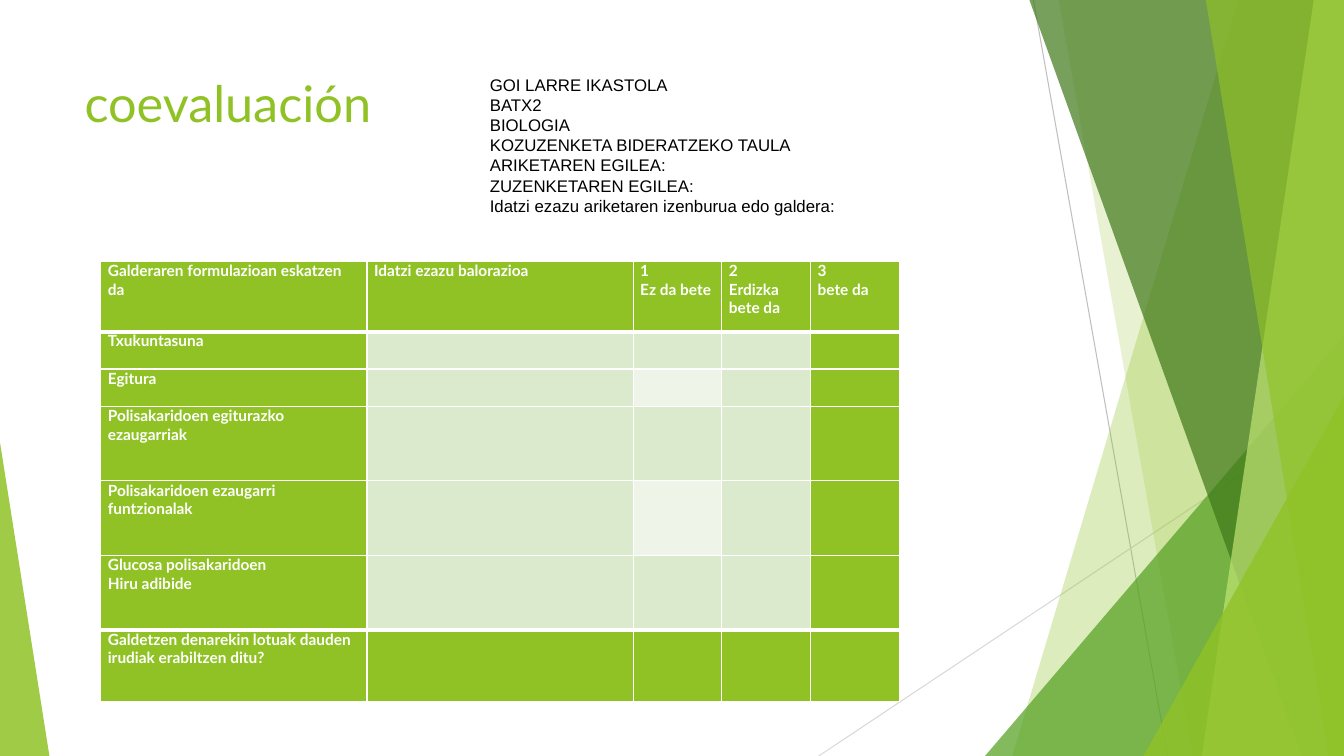
from lxml import etree
from pptx import Presentation
from pptx.dml.color import RGBColor
from pptx.enum.shapes import MSO_CONNECTOR, MSO_SHAPE
from pptx.oxml.ns import qn
from pptx.util import Pt

STRAIGHT = MSO_CONNECTOR.STRAIGHT
TRIANGLE = MSO_SHAPE.ISOSCELES_TRIANGLE
PX = 9144  # EMU per px, 100 px to the inch
WIDTH, HEIGHT = 1333, 750

THEME = {
    "lime": "90C226", "green": "54A021", "forest": "3F7819", "pale lime": "C0E474",
    "band": "DBE9CD", "light band": "EEF4E8", "white": "FFFFFF", "black": "000000",
    "dark line": "BFBFBF", "light line": "D9D9D9",
    "title size": 36, "heading size": 12, "table size": 11,
    "main font": "Lato", "heading font": "Arial",
}


def paint(shape, color, opacity):
    shape.shadow.inherit = False
    shape.line.fill.background()
    shape.fill.solid()
    shape.fill.fore_color.rgb = RGBColor.from_string(THEME[color])
    color_element = shape.fill._xPr.find(qn("a:solidFill"))[0]
    etree.SubElement(color_element, qn("a:alpha"), val=str(opacity * 1000))


def write_lines(text_frame, lines, font, size, color, bold=False):
    """Put each line in its own paragraph."""
    text_frame.word_wrap = True
    for index, line in enumerate(lines):
        paragraph = text_frame.add_paragraph() if index else text_frame.paragraphs[0]
        run = paragraph.add_run()
        run.text = line
        run.font.name = THEME[font]
        run.font.size = Pt(THEME[size])
        run.font.color.rgb = RGBColor.from_string(THEME[color])
        run.font.bold = bold


presentation = Presentation()
presentation.slide_width = WIDTH * PX
presentation.slide_height = HEIGHT * PX
slide = presentation.slides.add_slide(presentation.slide_layouts[6])
shapes = slide.shapes

# Thin lines behind the facets
for x1, y1, x2, y2, color in [
    (1025, 0, 1158, HEIGHT, "dark line"),
    (WIDTH, 403, 812, HEIGHT, "light line"),
]:
    line = shapes.add_connector(STRAIGHT, x1 * PX, y1 * PX, x2 * PX, y2 * PX)
    line.line.width = Pt(0.75)
    line.line.color.rgb = RGBColor.from_string(THEME[color])
    etree.SubElement(line._element.spPr, qn("a:effectLst"))

# Facets: bands reach the right edge from (top x, bottom x);
# triangles stand on the bottom edge: (left, top, width, apex)
for kind, place, color, opacity in [
    ("band", (1228, 1004), "lime", 30),
    ("band", (1050, 1183), "lime", 20),
    ("triangle", (977, 333, 356, 1), "green", 72),
    ("band", (1021, 1291), "forest", 70),
    ("band", (1303, 1192), "pale lime", 70),
    ("band", (1196, 1318), "lime", 65),
    ("triangle", (1134, 393, 199, 1), "lime", 80),
    ("triangle", (0, 439, 49, 0), "lime", 85),
]:
    if kind == "band":
        top_x, bottom_x = place
        builder = shapes.build_freeform(top_x, 0, scale=PX)
        builder.add_line_segments([(WIDTH, 0), (WIDTH, HEIGHT), (bottom_x, HEIGHT)])
        facet = builder.convert_to_shape()
    else:
        left, top, width, apex = place
        facet = shapes.add_shape(
            TRIANGLE, left * PX, top * PX, width * PX, (HEIGHT - top) * PX)
        facet.adjustments[0] = apex
    paint(facet, color, opacity)

title = shapes.add_textbox(74 * PX, 67 * PX, 940 * PX, 144 * PX)
write_lines(title.text_frame, ["coevaluación"], "main font", "title size", "lime")

# Assessment table
column_widths = [264, 264, 88, 88, 88]
row_heights = [70, 37, 37, 74, 74, 74, 71]
header = [
    ["Galderaren formulazioan eskatzen da"],
    ["Idatzi ezazu balorazioa"],
    ["1", "Ez da bete"],
    ["2", "Erdizka bete da"],
    ["3", "bete da"],
]
criteria = [
    ["Txukuntasuna"],
    ["Egitura"],
    ["Polisakaridoen egiturazko ezaugarriak"],
    ["Polisakaridoen ezaugarri funtzionalak"],
    ["Glucosa polisakaridoen", "Hiru adibide"],
    ["Galdetzen denarekin lotuak dauden irudiak erabiltzen ditu?"],
]
last_row, last_column = len(row_heights) - 1, len(column_widths) - 1
table = shapes.add_table(
    len(row_heights), len(column_widths), 100 * PX, 259 * PX,
    sum(column_widths) * PX, sum(row_heights) * PX).table
for column, width in zip(table.columns, column_widths):
    column.width = width * PX

for row_index, height in enumerate(row_heights):
    table.rows[row_index].height = height * PX
    for column_index in range(len(column_widths)):
        cell = table.cell(row_index, column_index)
        cell.margin_left = cell.margin_right = 7 * PX
        cell.margin_top = cell.margin_bottom = 0

        if row_index == 0:
            lines = header[column_index]
        else:
            lines = criteria[row_index - 1] if column_index == 0 else []
        write_lines(cell.text_frame, lines, "main font", "table size", "white", True)

        # Borders come before the fill in the cell properties
        properties = cell._tc.get_or_add_tcPr()
        for side in ("lnL", "lnR", "lnT", "lnB"):
            thick = (side, row_index) in [
                ("lnB", 0), ("lnT", 1), ("lnB", last_row - 1), ("lnT", last_row)]
            border = etree.SubElement(
                properties, qn("a:" + side), w=str(Pt(3 if thick else 1)))
            fill = etree.SubElement(border, qn("a:solidFill"))
            etree.SubElement(fill, qn("a:srgbClr"), val=THEME["white"])

        if row_index in (0, last_row) or column_index in (0, last_column):
            color = "lime"
        elif column_index == 2 and row_index % 2 == 0:
            color = "light band"
        else:
            color = "band"
        cell.fill.solid()
        cell.fill.fore_color.rgb = RGBColor.from_string(THEME[color])

heading = shapes.add_textbox(476 * PX, 69 * PX, 682 * PX, 182 * PX)
write_lines(heading.text_frame, [
    "GOI LARRE IKASTOLA",
    "BATX2",
    "BIOLOGIA",
    "KOZUZENKETA BIDERATZEKO TAULA",
    "ARIKETAREN EGILEA:",
    "ZUZENKETAREN EGILEA:",
    "Idatzi ezazu ariketaren izenburua edo galdera:",
], "heading font", "heading size", "black")

presentation.save("out.pptx")
